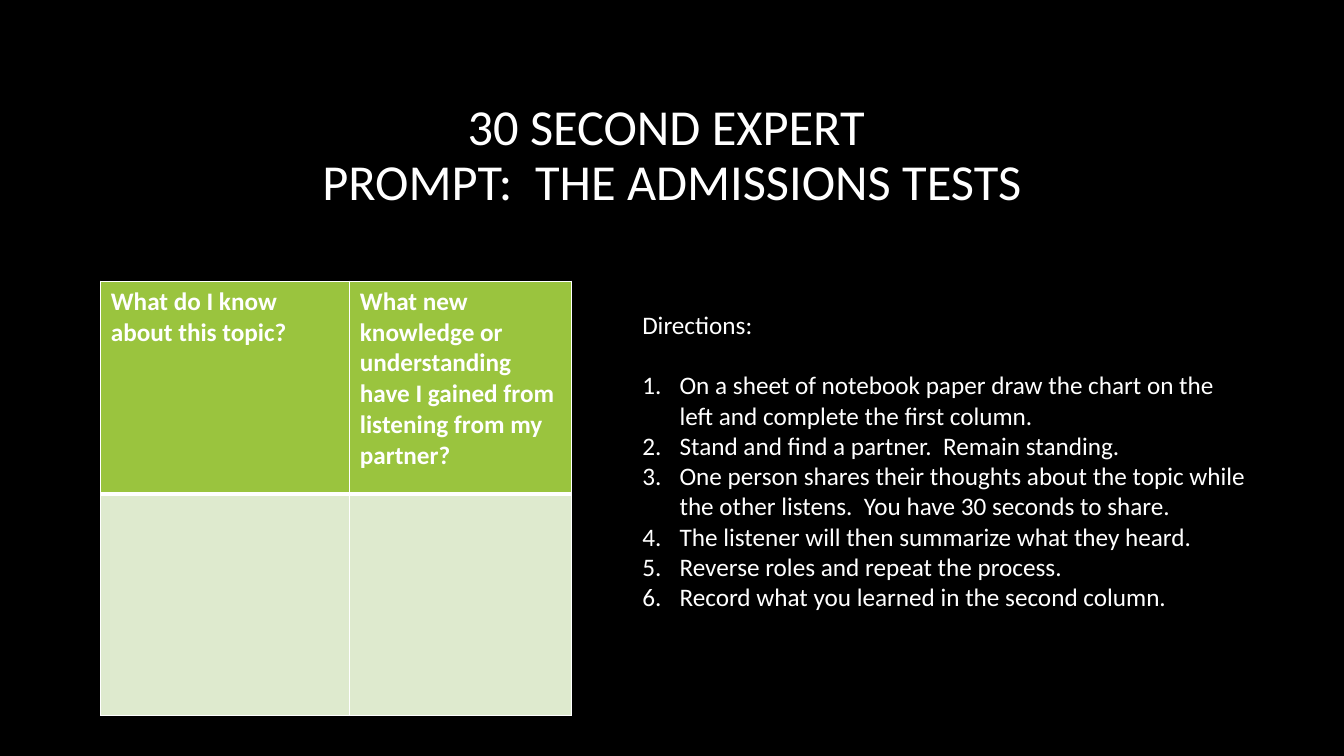
from dataclasses import dataclass

from pptx import Presentation
from pptx.dml.color import RGBColor
from pptx.enum.text import MSO_ANCHOR, MSO_AUTO_SIZE, PP_ALIGN
from pptx.oxml.xmlchemy import OxmlElement
from pptx.util import Inches, Pt

COLORS = {
    "background": "000000",
    "text": "FFFFFF",
    "border": "FFFFFF",
    "header": "9AC43E",
    "answer": "DEEACE",
}
FONT = "Calibri"
TITLE = "30 SECOND EXPERT \vPROMPT:  THE ADMISSIONS TESTS"
QUESTIONS = [
    "What do I know about this topic?",
    "What new knowledge or understanding have I gained from listening from my partner?",
]
STEPS = [
    "On a sheet of notebook paper draw the chart on the left and complete the first column.",
    "Stand and find a partner.  Remain standing.",
    "One person shares their thoughts about the topic while the other listens.  You have 30 seconds to share.",
    "The listener will then summarize what they heard.",
    "Reverse roles and repeat the process.",
    "Record what you learned in the second column.",
]
COLUMN_WIDTHS = [2.47, 2.2]


@dataclass
class Box:
    left: float
    top: float
    width: float
    height: float

    def lengths(self):
        return [Inches(value) for value in (self.left, self.top, self.width, self.height)]


@dataclass
class TableRow:
    height: float
    fill: str
    texts: list[str]
    top_line: float
    bottom_line: float


ROWS = [
    TableRow(2.11, "header", QUESTIONS, 1, 3),
    TableRow(2.2, "answer", ["", ""], 3, 1),
]


def write_text(paragraph, text, *, size=18, bold=False, align=PP_ALIGN.LEFT,
               line_spacing=1.0, space_before=0, indent=0.0, numbered=False) -> None:
    paragraph.text = text
    properties = paragraph._p.get_or_add_pPr()
    properties.set("marL", str(Inches(indent)))
    properties.set("indent", str(-Inches(indent)))
    bullet = OxmlElement("a:buAutoNum" if numbered else "a:buNone")
    if numbered:
        bullet.set("type", "arabicPeriod")
    properties.append(bullet)
    paragraph.alignment = align
    paragraph.line_spacing = line_spacing
    paragraph.space_before = Pt(space_before)
    for run in paragraph.runs:
        run.font.name = FONT
        run.font.size = Pt(size)
        run.font.bold = bold
        run.font.color.rgb = RGBColor.from_string(COLORS["text"])


def place(shape, box: Box, anchor: MSO_ANCHOR) -> None:
    shape.left, shape.top, shape.width, shape.height = box.lengths()
    shape.text_frame.word_wrap = True
    shape.text_frame.auto_size = MSO_AUTO_SIZE.NONE
    shape.text_frame.vertical_anchor = anchor


def add_border(cell, side: str, width: float) -> None:
    line = OxmlElement(f"a:ln{side}")
    line.set("w", str(Pt(width)))
    fill = OxmlElement("a:solidFill")
    color = OxmlElement("a:srgbClr")
    color.set("val", COLORS["border"])
    fill.append(color)
    line.append(fill)
    cell._tc.get_or_add_tcPr().append(line)


def add_chart_table(slide, box: Box) -> None:
    table = slide.shapes.add_table(len(ROWS), len(COLUMN_WIDTHS), *box.lengths()).table
    table.horz_banding = False
    for column, width in zip(table.columns, COLUMN_WIDTHS):
        column.width = Inches(width)
    for table_row, row in zip(table.rows, ROWS):
        table_row.height = Inches(row.height)
        borders = {"L": 1, "R": 1, "T": row.top_line, "B": row.bottom_line}
        for cell, text in zip(table_row.cells, row.texts):
            for side, width in borders.items():
                add_border(cell, side, width)
            cell.fill.solid()
            cell.fill.fore_color.rgb = RGBColor.from_string(COLORS[row.fill])
            if text:
                write_text(cell.text_frame.paragraphs[0], text, bold=True)


def add_directions(shape, box: Box) -> None:
    place(shape, box, MSO_ANCHOR.TOP)
    frame = shape.text_frame
    write_text(frame.paragraphs[0], "Directions:")
    for number, step in enumerate(STEPS):
        write_text(frame.add_paragraph(), step, indent=0.37, numbered=True,
                   space_before=0 if number else 21.5)


def main() -> None:
    presentation = Presentation()
    presentation.slide_width = Inches(13.33)
    presentation.slide_height = Inches(7.5)
    slide = presentation.slides.add_slide(presentation.slide_layouts[1])
    slide.background.fill.solid()
    slide.background.fill.fore_color.rgb = RGBColor.from_string(COLORS["background"])

    title = slide.shapes.title
    place(title, Box(1, 0.68, 11.33, 1.75), MSO_ANCHOR.MIDDLE)
    write_text(title.text_frame.paragraphs[0], TITLE, size=36,
               align=PP_ALIGN.CENTER, line_spacing=0.9)
    add_chart_table(slide, Box(1, 2.79, 4.67, 4.31))
    add_directions(slide.placeholders[1], Box(6.27, 3.02, 6.21, 3.43))
    presentation.save("out.pptx")


if __name__ == "__main__":
    main()
